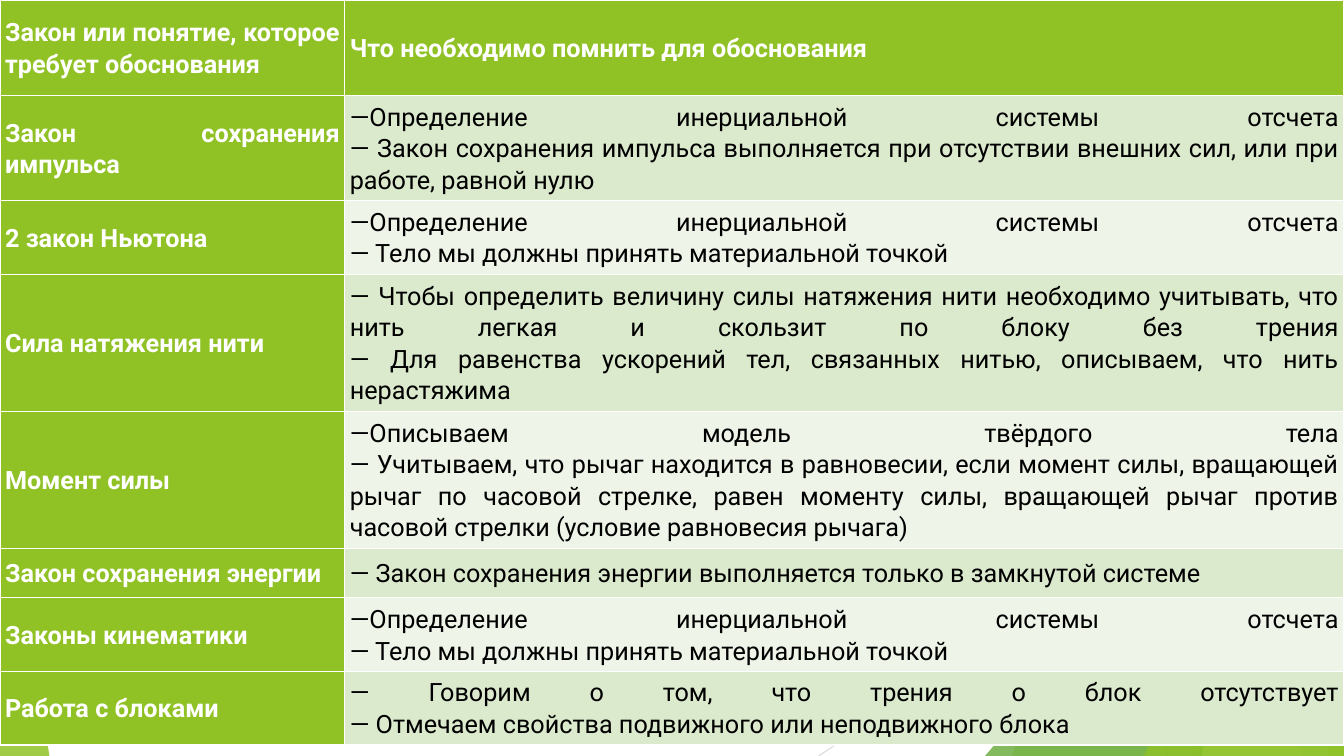
from lxml import etree
from pptx import Presentation
from pptx.dml.color import RGBColor
from pptx.enum.shapes import MSO_CONNECTOR, MSO_SHAPE
from pptx.enum.text import MSO_ANCHOR, PP_ALIGN
from pptx.oxml.ns import qn
from pptx.util import Inches, Pt

STRAIGHT = MSO_CONNECTOR.STRAIGHT
TRIANGLE = MSO_SHAPE.ISOSCELES_TRIANGLE
MIDDLE = MSO_ANCHOR.MIDDLE
JUSTIFY = PP_ALIGN.JUSTIFY
GREEN = "90C226"
BANDS = ["EEF4E8", "DBE9CD"]


def color(hex_code):
    return RGBColor.from_string(hex_code)


def style_facet(sp, hex_code, opacity):
    sp.shadow.inherit = False
    sp.line.fill.background()
    sp.fill.solid()
    sp.fill.fore_color.rgb = color(hex_code)
    clr = sp.fill._xPr.find(qn("a:solidFill"))[0]
    etree.SubElement(clr, qn("a:alpha")).set("val", str(opacity * 1000))


prs = Presentation()
prs.slide_width, prs.slide_height = Inches(13.33), Inches(7.5)
s = prs.slides.add_slide(prs.slide_layouts[6])

# Thin background lines
for x1, y1, x2, y2, hex_code in [
    (10.25, 0, 11.58, 7.5, "BFBFBF"),
    (13.33, 4.03, 8.12, 7.5, "D9D9D9"),
]:
    line = s.shapes.add_connector(STRAIGHT, Inches(x1), Inches(y1), Inches(x2), Inches(y2))
    line.line.color.rgb = color(hex_code)
    line.line.width = Pt(0.75)
    etree.SubElement(line._element.spPr, qn("a:effectLst"))

# Translucent facets, back to front: slanted ones run from a top x to a bottom x
# and reach the right edge; triangles have a box and an apex position
facets = [
    ("slant", (12.28, 10.04), GREEN, 30),
    ("slant", (10.5, 11.83), GREEN, 20),
    ("triangle", (9.77, 3.33, 3.56, 4.17, 1), "54A021", 72),
    ("slant", (10.21, 12.91), "3F7819", 70),
    ("slant", (13.03, 11.92), "C0E474", 70),
    ("slant", (11.96, 13.18), GREEN, 65),
    ("triangle", (11.34, 3.93, 1.99, 3.57, 1), GREEN, 80),
    ("triangle", (0, 4.39, 0.49, 3.11, 0), GREEN, 85),
]
for kind, geometry, hex_code, opacity in facets:
    if kind == "slant":
        top_x, bottom_x = geometry
        outline = s.shapes.build_freeform(Inches(top_x), Inches(-0.01))
        outline.add_line_segments(
            [(Inches(x), Inches(y)) for x, y in [(13.33, -0.01), (13.33, 7.5), (bottom_x, 7.5)]]
        )
        sp = outline.convert_to_shape()
    else:
        *box, apex = geometry
        sp = s.shapes.add_shape(TRIANGLE, *[Inches(v) for v in box])
        sp.adjustments[0] = apex
    style_facet(sp, hex_code, opacity)

# Table of laws: row height, law, what to remember
INERTIAL = "—Определение инерциальной системы отсчета\n"
POINT_MASS = INERTIAL + "— Тело мы должны принять материальной точкой"
rows = [
    (0.95, "Закон или понятие, которое требует обоснования",
     "Что необходимо помнить для обоснования"),
    (1.03, "Закон сохранения импульса",
     INERTIAL + "— Закон сохранения импульса выполняется при отсутствии внешних сил, "
     "или при работе, равной нулю"),
    (0.73, "2 закон Ньютона", POINT_MASS),
    (1.36, "Сила натяжения нити",
     "— Чтобы определить величину силы натяжения нити необходимо учитывать, "
     "что нить легкая и скользит по блоку без трения\n"
     "— Для равенства ускорений тел, связанных нитью, описываем, что нить нерастяжима"),
    (1.36, "Момент силы",
     "—Описываем модель твёрдого тела\n"
     "— Учитываем, что рычаг находится в равновесии, если момент силы, вращающей рычаг "
     "по часовой стрелке, равен моменту силы, вращающей рычаг против часовой стрелки "
     "(условие равновесия рычага)"),
    (0.49, "Закон сохранения энергии",
     "— Закон сохранения энергии выполняется только в замкнутой системе"),
    (0.73, "Законы кинематики", POINT_MASS),
    (0.73, "Работа с блоками",
     "— Говорим о том, что трения о блок отсутствует\n"
     "— Отмечаем свойства подвижного или неподвижного блока"),
]
height = sum(row[0] for row in rows)
table = s.shapes.add_table(len(rows), 2, 0, 0, Inches(13.33), Inches(height)).table
table.first_col = True
for column, width in zip(table.columns, (3.42, 9.91)):
    column.width = Inches(width)

for i, (row_height, *texts) in enumerate(rows):
    table.rows[i].height = Inches(row_height)
    for j, text in enumerate(texts):
        heading = i == 0 or j == 0
        cell = table.cell(i, j)
        cell.fill.solid()
        cell.fill.fore_color.rgb = color(GREEN if heading else BANDS[i % 2])
        cell.vertical_anchor = MIDDLE
        cell.margin_left = cell.margin_right = Inches(0.05)
        cell.margin_top = cell.margin_bottom = Inches(0.05)
        p = cell.text_frame.paragraphs[0]
        p.text = text
        p.alignment = JUSTIFY
        p.line_spacing = 1.07
        p.space_after = Pt(8)
        p.font.name = "Roboto"
        p.font.size = Pt(18)
        p.font.bold = heading
        p.font.color.rgb = color("FFFFFF" if heading else "000000")

prs.save("out.pptx")
